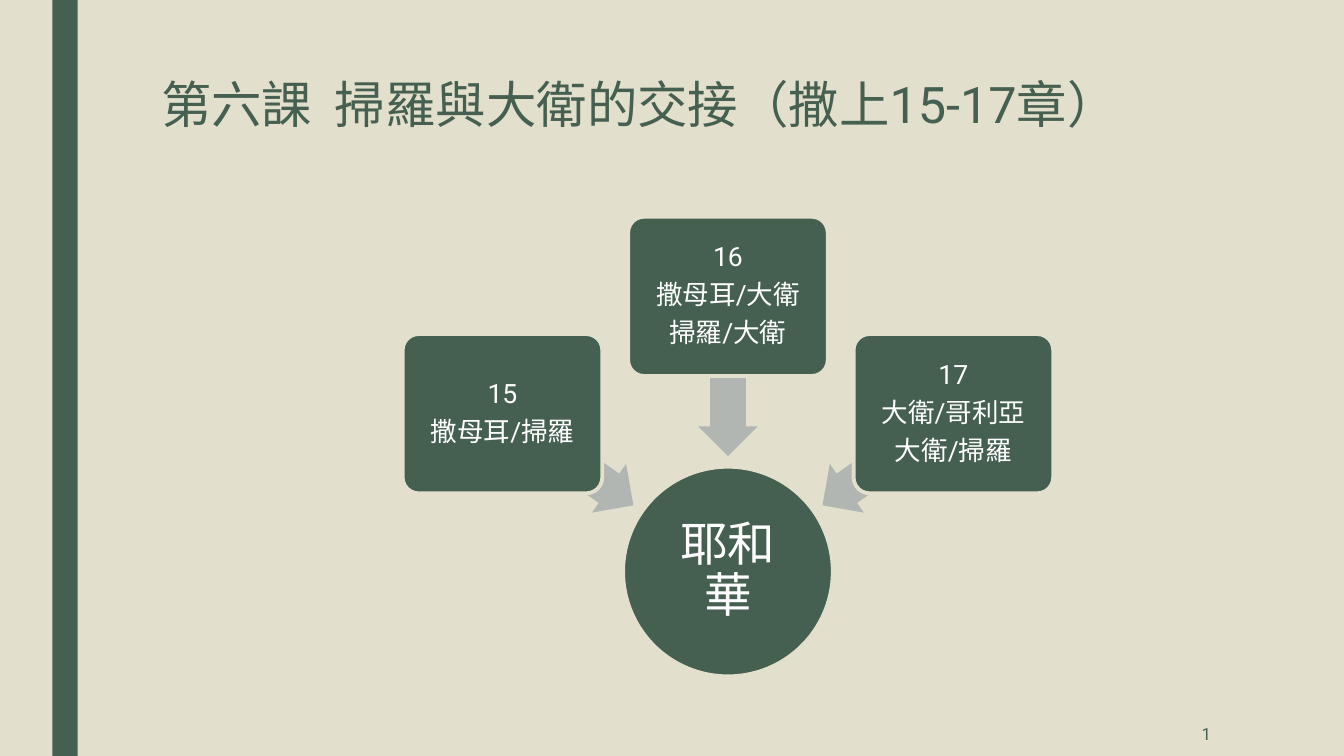
from math import cos, radians, sin

from pptx import Presentation
from pptx.dml.color import RGBColor
from pptx.enum.shapes import MSO_SHAPE
from pptx.enum.text import MSO_ANCHOR, PP_ALIGN
from pptx.util import Inches, Pt

TITLE = "第六課  掃羅與大衛的交接（撒上15-17章）"
PAGE_NUMBER = "1"
HUB = "耶和華"
# direction from the hub in degrees (clockwise from the right), card lines
CHAPTERS = [
    (215, ["15", "撒母耳/掃羅"]),
    (270, ["16", "撒母耳/大衛", "掃羅/大衛"]),
    (325, ["17", "大衛/哥利亞", "大衛/掃羅"]),
]

FONT = "Roboto"
GREEN, SAND, GREY, WHITE = "455F51", "E2DFCC", "B1B6B3", "FFFFFF"

HUB_X, HUB_Y, HUB_SIZE = 7.22, 5.67, 2.08
CARD_W, CARD_H, CARD_DISTANCE = 1.98, 1.58, 2.73
ARROW_W, ARROW_H, ARROW_DISTANCE = 1.59, 0.59, 1.94


def color(hex_code):
    return RGBColor.from_string(hex_code)


def add_filled(kind, left, top, width, height, fill, outline=None):
    shape = slide.shapes.add_shape(
        kind, Inches(left), Inches(top), Inches(width), Inches(height))
    shape.shadow.inherit = False
    shape.fill.solid()
    shape.fill.fore_color.rgb = color(fill)
    if outline:
        shape.line.color.rgb = color(outline)
        shape.line.width = Pt(2.75)
    else:
        shape.line.fill.background()
    return shape


def add_around_hub(kind, angle, distance, width, height, fill, outline=None):
    """Centre a shape at a distance from the hub's centre."""
    x = HUB_X + distance * cos(radians(angle))
    y = HUB_Y + distance * sin(radians(angle))
    return add_filled(kind, x - width / 2, y - height / 2, width, height, fill, outline)


def write(shape, lines, size, ink, align, anchor, spacing=1.0, after=0):
    frame = shape.text_frame
    frame.word_wrap = True
    frame.vertical_anchor = anchor
    frame.text = "\n".join(lines)
    for paragraph in frame.paragraphs:
        paragraph.alignment = align
        paragraph.line_spacing = spacing
        paragraph.space_after = Pt(after * size)
        paragraph.font.name = FONT
        paragraph.font.size = Pt(size)
        paragraph.font.color.rgb = color(ink)


def write_label(shape, lines, size):
    frame = shape.text_frame
    frame.margin_left = frame.margin_right = Inches(0.04)
    frame.margin_top = frame.margin_bottom = Inches(0.04)
    write(shape, lines, size, WHITE, PP_ALIGN.CENTER, MSO_ANCHOR.MIDDLE, 0.9, 0.35)


def add_text(left, top, width, height):
    return slide.shapes.add_textbox(
        Inches(left), Inches(top), Inches(width), Inches(height))


deck = Presentation()
deck.slide_width, deck.slide_height = Inches(13.33), Inches(7.5)
slide = deck.slides.add_slide(deck.slide_layouts[6])
slide.background.fill.solid()
slide.background.fill.fore_color.rgb = color(SAND)

add_filled(MSO_SHAPE.RECTANGLE, 0.52, 0, 0.25, 7.5, GREEN)
write(add_text(1.5, 0.75, 10.71, 1.2), [TITLE], 36, GREEN,
      PP_ALIGN.LEFT, MSO_ANCHOR.TOP, 0.89)
write(add_text(10.36, 7.06, 1.75, 0.44), [PAGE_NUMBER], 12, GREEN,
      PP_ALIGN.RIGHT, MSO_ANCHOR.MIDDLE)

hub = add_around_hub(MSO_SHAPE.OVAL, 0, 0, HUB_SIZE, HUB_SIZE, GREEN, SAND)
write_label(hub, [HUB], 34)

for angle, lines in CHAPTERS:
    arrow = add_around_hub(MSO_SHAPE.LEFT_ARROW, angle, ARROW_DISTANCE,
                           ARROW_W, ARROW_H, GREY)
    arrow.rotation = angle
    arrow.adjustments[0], arrow.adjustments[1] = 0.6, 0.5
    card = add_around_hub(MSO_SHAPE.ROUNDED_RECTANGLE, angle, CARD_DISTANCE,
                          CARD_W, CARD_H, GREEN, SAND)
    card.adjustments[0] = 0.1
    write_label(card, lines, 19)

deck.save("out.pptx")
